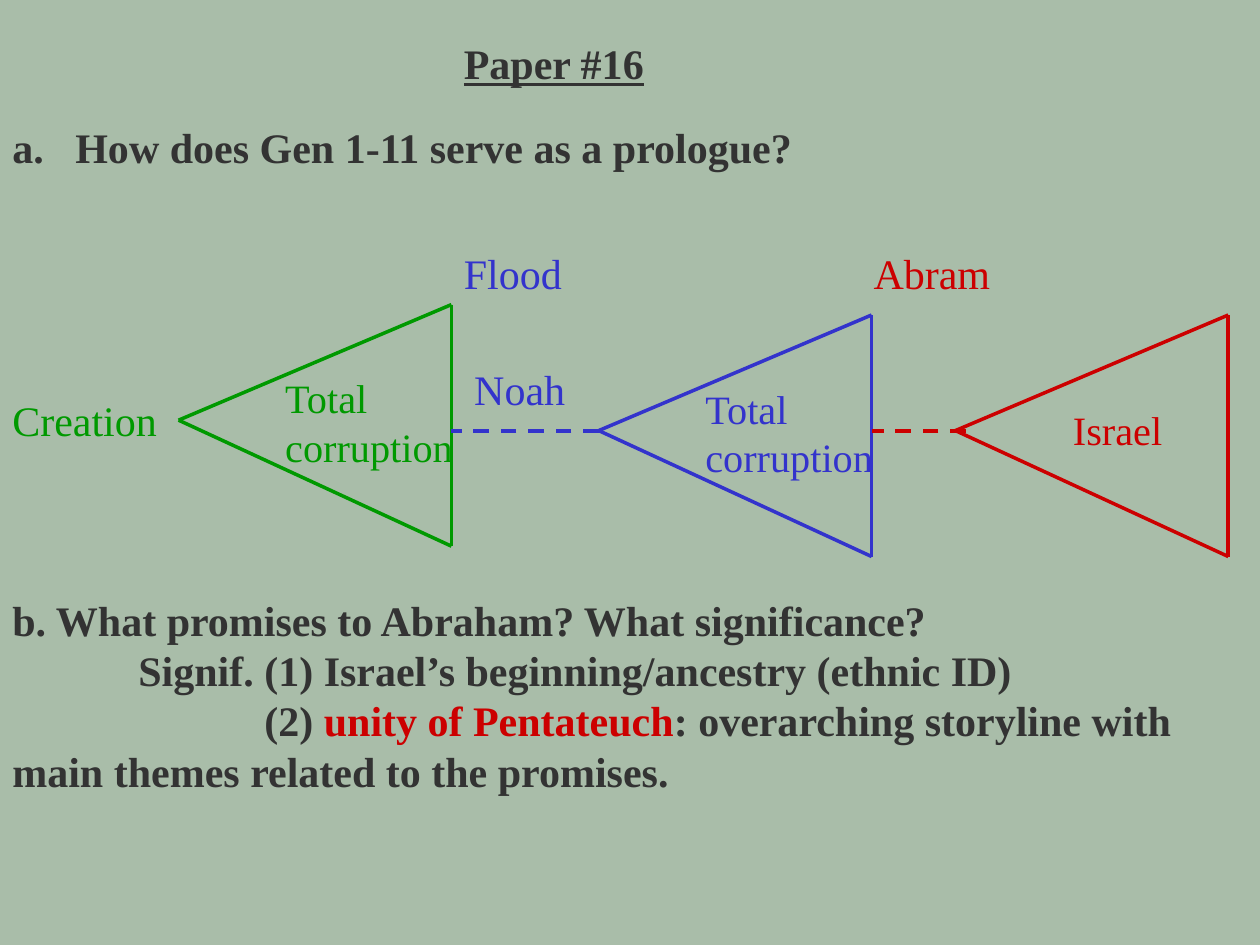
from typing import NamedTuple

from lxml.etree import SubElement
from pptx import Presentation
from pptx.dml.color import RGBColor
from pptx.enum.dml import MSO_LINE
from pptx.enum.shapes import MSO_CONNECTOR
from pptx.enum.text import MSO_AUTO_SIZE
from pptx.oxml.ns import qn
from pptx.util import Cm, Pt

INK, GREEN, BLUE, RED = "333333", "009900", "3333CC", "CC0000"
SPAN, RISE, DROP = 5.5, 2.33, 2.54
HANG, STEP = 1.27, 2.54


class Run(NamedTuple):
    text: str
    hue: str = INK


class Line(NamedTuple):
    runs: list[Run]
    left: float = 0
    first: float = 0


class Label(NamedTuple):
    left: float
    top: float
    wide: float
    high: float
    lines: list[Line]
    form: dict = {}
    wrap: bool = True


class Cone(NamedTuple):
    tip: float
    mid: float
    hue: str
    dash: tuple[float, float] | None = None


def plain(text: str, hue: str = INK) -> list[Line]:
    """One line of one run."""
    return [Line([Run(text, hue)])]


BOLD = {"bold": True}
SMALL = {"size": Pt(23)}
LABELS = [
    Label(9.1, 0.64, 4.17, 1.27, plain("Paper #16"),
          {"bold": True, "underline": True}, wrap=False),
    Label(0, 2.33, 25.4, 1.27, [
        Line([Run("a.\tHow does Gen 1-11 serve as a prologue?")], HANG, -HANG),
    ], BOLD),
    Label(0, 7.83, 3.81, 1.27, plain("Creation", GREEN)),
    Label(5.5, 7.41, 4.45, 2.21, plain("Total corruption", GREEN), SMALL),
    Label(9.1, 4.87, 3.38, 1.27, plain("Flood", BLUE)),
    Label(9.31, 7.2, 2.54, 1.27, plain("Noah", BLUE)),
    Label(13.97, 7.62, 4.45, 2.21, plain("Total corruption", BLUE), SMALL),
    Label(17.36, 4.87, 4.23, 1.27, plain("Abram", RED)),
    Label(21.38, 8.04, 2.75, 1.22, plain("Israel", RED), SMALL),
    Label(0, 11.85, 25.4, 4.37, [
        Line([Run("b. What promises to Abraham? What significance?")]),
        Line([Run("Signif. (1) Israel’s beginning/ancestry (ethnic ID)")],
             first=STEP),
        Line([Run("(2) "), Run("unity of Pentateuch", RED),
              Run(": overarching storyline with main themes related "
                  "to the promises.")], first=2 * STEP),
    ], BOLD),
]
CONES = [
    Cone(3.6, 8.47, GREEN),
    Cone(12.07, 8.68, BLUE, (12.07, 9.1)),
    Cone(19.26, 8.68, RED, (19.47, 17.57)),
]


def paint(fill, hue: str) -> None:
    """Make a fill solid in a hex colour."""
    fill.solid()
    fill.fore_color.rgb = RGBColor.from_string(hue)


def apply(target, form: dict) -> None:
    for name, value in form.items():
        setattr(target, name, value)


def draw_label(slide, label: Label) -> None:
    box = slide.shapes.add_textbox(*map(Cm, label[:4]))
    frame = box.text_frame
    apply(frame, {"word_wrap": label.wrap,
                  "auto_size": MSO_AUTO_SIZE.SHAPE_TO_FIT_TEXT})
    for i, line in enumerate(label.lines):
        para = frame.add_paragraph() if i else frame.paragraphs[0]
        props = para._p.get_or_add_pPr()
        props.set("marL", str(Cm(line.left)))
        props.set("indent", str(Cm(line.first)))
        for part in line.runs:
            run = para.add_run()
            run.text = part.text
            apply(run.font, {"name": "Times New Roman", "size": Pt(24)} | label.form)
            paint(run.font.fill, part.hue)


def draw_line(group, start: tuple, end: tuple, hue: str, form: dict) -> None:
    line = group.shapes.add_connector(
        MSO_CONNECTOR.STRAIGHT, *map(Cm, start + end))
    paint(line.line.fill, hue)
    apply(line.line, form)
    SubElement(line._element.spPr, qn("a:effectLst"))


def draw_cone(slide, cone: Cone) -> None:
    group = slide.shapes.add_group_shape()
    if cone.dash:
        start, end = ((x, cone.mid) for x in cone.dash)
        draw_line(group, start, end, cone.hue,
                  {"width": Pt(2.25), "dash_style": MSO_LINE.DASH})
    tip = (cone.tip, cone.mid)
    top = (cone.tip + SPAN, cone.mid - RISE)
    base = (cone.tip + SPAN, cone.mid + DROP)
    for start, end in ((tip, top), (tip, base), (top, base)):
        draw_line(group, start, end, cone.hue, {"width": Pt(2)})


def main() -> None:
    deck = Presentation()
    apply(deck, {"slide_width": Cm(25.4), "slide_height": Cm(19.05)})
    slide = deck.slides.add_slide(deck.slide_layouts[6])
    paint(slide.background.fill, "A9BDA9")
    for cone in CONES:
        draw_cone(slide, cone)
    for label in LABELS:
        draw_label(slide, label)
    deck.save("out.pptx")


if __name__ == "__main__":
    main()
